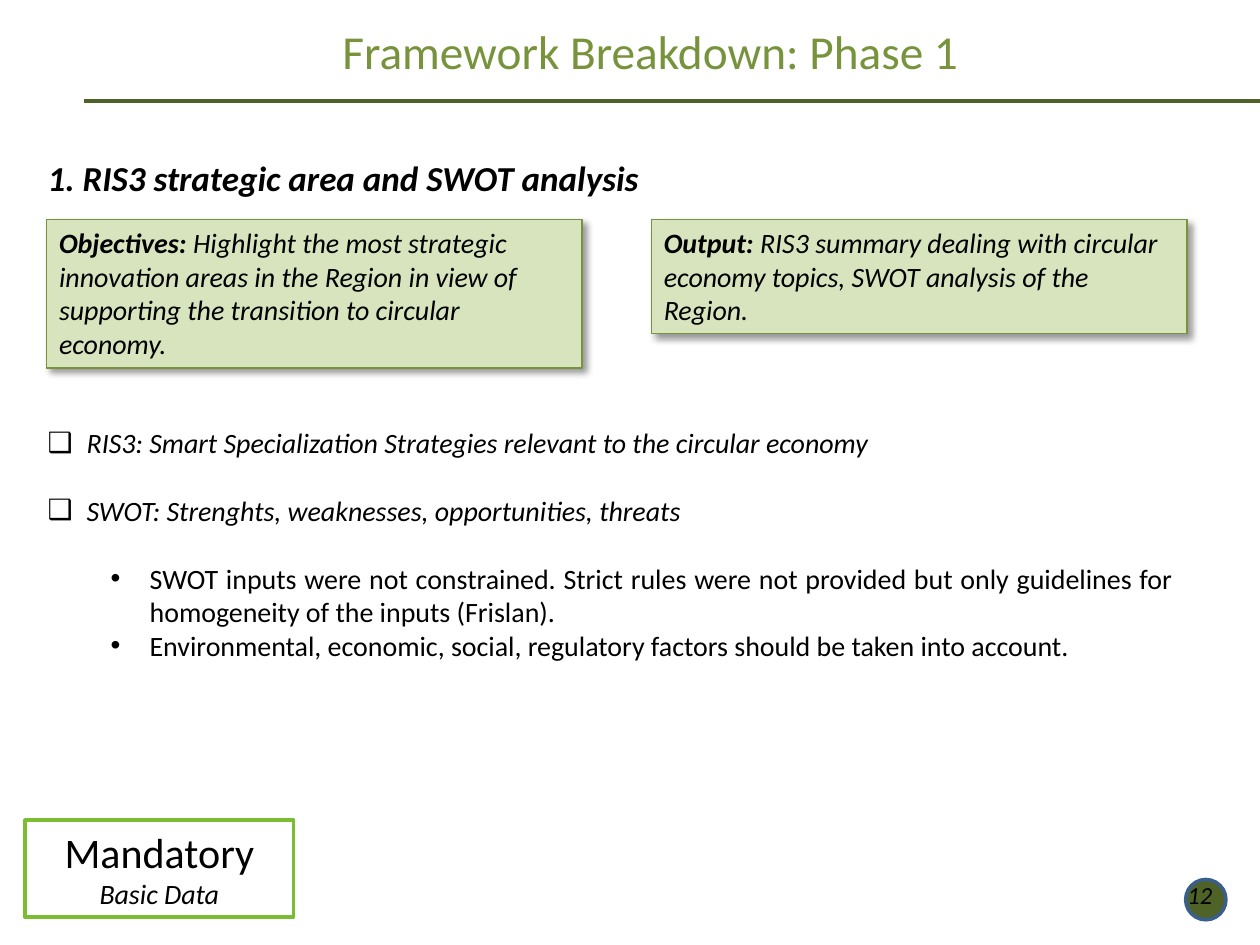
from collections import namedtuple

from lxml.etree import SubElement
from pptx import Presentation
from pptx.dml.color import RGBColor
from pptx.enum.shapes import MSO_CONNECTOR, MSO_SHAPE
from pptx.enum.text import MSO_ANCHOR, PP_ALIGN as Align
from pptx.oxml.ns import qn
from pptx.util import Inches, Pt

BLACK = RGBColor(0x00, 0x00, 0x00)
OLIVE = RGBColor(0x77, 0x93, 0x3C)
DARK_OLIVE = RGBColor(0x4F, 0x62, 0x28)
PALE_GREEN = RGBColor(0xD7, 0xE4, 0xBD)
BRIGHT_GREEN = RGBColor(0x7A, 0xBC, 0x32)
NAVY = RGBColor(0x3A, 0x5F, 0x8C)

FONT = "Calibri"
BODY_SIZE = 16
LINE_GAP = Pt(19.5)  # one line of body text

# The slide is a grid of 100 columns by 75 rows; boxes are given in cells.
COLUMNS, ROWS = 100, 75
CELL = Inches(0.1)
Box = namedtuple("Box", "left top width height")


def cells(*lengths):
    return [round(length * CELL) for length in lengths]


def add_run(paragraph, text, size=BODY_SIZE, color=BLACK, bold=False, italic=False):
    run = paragraph.add_run()
    run.text = text
    font = run.font
    font.name, font.size, font.bold, font.italic = FONT, Pt(size), bold, italic
    font.color.rgb = color


def add_text_box(slide, box):
    frame = slide.shapes.add_textbox(*cells(*box)).text_frame
    frame.word_wrap = True
    return frame


def add_outlined_shape(slide, kind, box, fill, line, width):
    shape = slide.shapes.add_shape(kind, *cells(*box))
    shape.shadow.inherit = False
    if fill is None:
        shape.fill.background()
    else:
        shape.fill.solid()
        shape.fill.fore_color.rgb = fill
    shape.line.color.rgb = line
    shape.line.width = Pt(width)
    shape.text_frame.word_wrap = True
    return shape


def add_drop_shadow(shape):
    effects = shape._element.spPr.find(qn("a:effectLst"))
    shadow = SubElement(effects, qn("a:outerShdw"), blurRad=str(Pt(4)),
                        dist=str(Pt(3)), dir=str(45 * 60000), rotWithShape="0")
    color = SubElement(shadow, qn("a:srgbClr"), val="000000")
    SubElement(color, qn("a:alpha"), val="40000")


def set_bullet(paragraph, mark, indent):
    props = paragraph._p.get_or_add_pPr()
    props.set("marL", str(Inches(indent)))
    props.set("indent", str(-Inches(0.31)))
    SubElement(props, qn("a:buFont"), typeface="Arial")
    SubElement(props, qn("a:buChar"), char=mark)


def add_page_number(slide, box, number):
    diameter = 3.2
    badge = Box(box.left + 2.1, box.top + 0.8, diameter, diameter)
    add_outlined_shape(slide, MSO_SHAPE.OVAL, badge, DARK_OLIVE, NAVY, 2)
    frame = add_text_box(slide, box)
    frame.vertical_anchor = MSO_ANCHOR.MIDDLE
    paragraph = frame.paragraphs[0]
    paragraph.alignment = Align.RIGHT
    add_run(paragraph, number, size=14, italic=True)


def add_title(slide, box, text):
    """Centred title with a rule below it that runs to the slide's right edge."""
    paragraph = add_text_box(slide, box).paragraphs[0]
    paragraph.alignment = Align.CENTER
    add_run(paragraph, text, size=27, color=OLIVE)
    rule_top = box.top + box.height
    rule = slide.shapes.add_connector(
        MSO_CONNECTOR.STRAIGHT, *cells(6.7, rule_top, COLUMNS, rule_top))
    rule.line.color.rgb = DARK_OLIVE
    rule.line.width = Pt(2.25)
    SubElement(rule._element.spPr, qn("a:effectLst"))


def add_heading(slide, box, text):
    paragraph = add_text_box(slide, box).paragraphs[0]
    paragraph.alignment = Align.JUSTIFY
    add_run(paragraph, text, size=20, bold=True, italic=True)


def add_summary_cards(slide, box, cards):
    """Equal-width cards, each as tall as its own text."""
    gap = 5.5
    width = (box.width - gap * (len(cards) - 1)) / len(cards)
    for index, (label, text, height) in enumerate(cards):
        place = Box(box.left + index * (width + gap), box.top, width, height)
        card = add_outlined_shape(slide, MSO_SHAPE.RECTANGLE, place,
                                  PALE_GREEN, OLIVE, 0.75)
        add_drop_shadow(card)
        card.text_frame.vertical_anchor = MSO_ANCHOR.TOP
        paragraph = card.text_frame.paragraphs[0]
        paragraph.alignment = Align.LEFT
        add_run(paragraph, label, bold=True, italic=True)
        add_run(paragraph, text, italic=True)


def add_details(slide, box, topics, remarks):
    frame = add_text_box(slide, box)
    items = [("❑", 0.31, text, True) for text in topics]
    items += [("•", 0.81, text, False) for text in remarks]
    for index, (mark, indent, text, italic) in enumerate(items):
        paragraph = frame.add_paragraph() if index else frame.paragraphs[0]
        paragraph.alignment = Align.JUSTIFY
        if 0 < index <= len(topics):
            paragraph.space_before = LINE_GAP
        set_bullet(paragraph, mark, indent)
        add_run(paragraph, text, italic=italic)


def add_status(slide, box, status, kind):
    frame = add_outlined_shape(slide, MSO_SHAPE.RECTANGLE, box, None,
                               BRIGHT_GREEN, 2).text_frame
    frame.vertical_anchor = MSO_ANCHOR.TOP
    first, second = frame.paragraphs[0], frame.add_paragraph()
    first.alignment = second.alignment = Align.CENTER
    add_run(first, status, size=24)
    add_run(second, kind, italic=True)


def main():
    deck = Presentation()
    deck.slide_width, deck.slide_height = cells(COLUMNS, ROWS)
    slide = deck.slides.add_slide(deck.slide_layouts[6])

    add_page_number(slide, Box(92, 69, 5.2, 4), "12")
    add_title(slide, Box(0.4, 1.3, 102.4, 6.7), "Framework Breakdown: Phase 1")
    add_heading(slide, Box(2.8, 11.9, 92.9, 4.4),
                "1. RIS3 strategic area and SWOT analysis")
    add_summary_cards(slide, Box(3.7, 17.4, 90.5, 11.8), [
        ("Objectives: ", "Highlight the most strategic innovation areas in the Region "
         "in view of supporting the transition to circular economy.", 11.8),
        ("Output: ", "RIS3 summary dealing with circular economy topics, "
         "SWOT analysis of the Region.", 9.1),
    ])
    add_details(
        slide, Box(2.8, 33.3, 91.3, 19.9),
        topics=["RIS3: Smart Specialization Strategies relevant to the circular economy",
                "SWOT: Strenghts, weaknesses, opportunities, threats"],
        remarks=["SWOT inputs were not constrained. Strict rules were not provided but "
                 "only guidelines for homogeneity of the inputs (Frislan).",
                 "Environmental, economic, social, regulatory factors should be taken "
                 "into account."])
    add_status(slide, Box(2, 65.1, 21.3, 7.7), "Mandatory", "Basic Data")

    deck.save("out.pptx")


if __name__ == "__main__":
    main()
